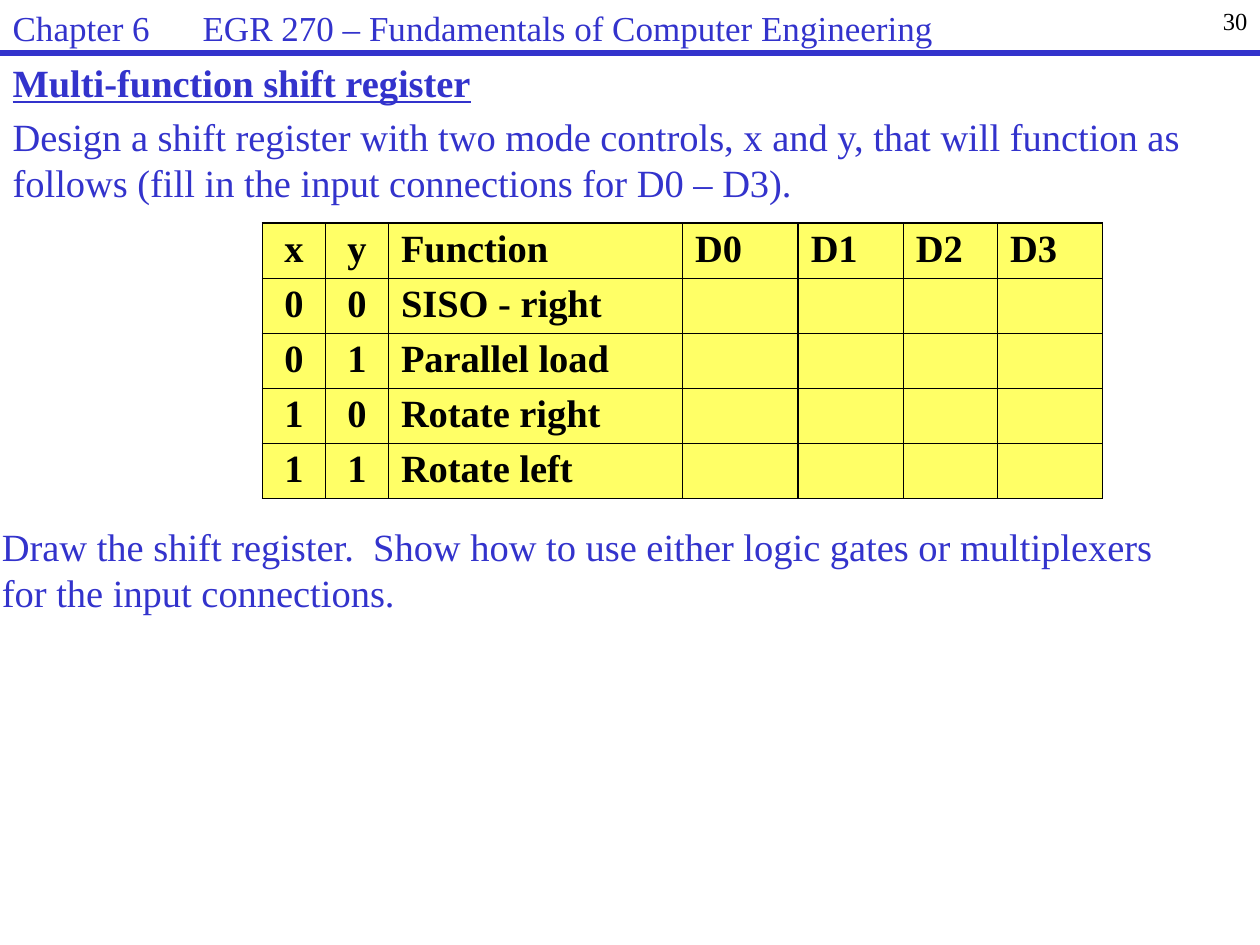
from lxml.etree import SubElement
from pptx import Presentation
from pptx.dml.color import RGBColor
from pptx.enum.text import MSO_ANCHOR, MSO_AUTO_SIZE, PP_ALIGN
from pptx.oxml.ns import qn
from pptx.util import Cm, Pt

COLORS = {"blue": "3333CC", "black": "000000", "yellow": "FFFF66"}
FONT = "Times New Roman"


def style(paragraph, size, color, bold=False, align=PP_ALIGN.LEFT):
    paragraph.alignment = align
    paragraph.font.name = FONT
    paragraph.font.size = Pt(size)
    paragraph.font.bold = bold
    paragraph.font.color.rgb = RGBColor.from_string(COLORS[color])


def fill_box(box, place, texts, size, color, align=PP_ALIGN.LEFT):
    box.left, box.top, box.width, box.height = [Cm(value) for value in place]
    frame = box.text_frame
    frame.word_wrap = True
    frame.auto_size = MSO_AUTO_SIZE.NONE
    frame.vertical_anchor = MSO_ANCHOR.TOP
    frame.text = "\n".join(texts)
    for paragraph in frame.paragraphs:
        style(paragraph, size, color, align=align)
        paragraph.space_before = Pt(size * 0.2)
    return frame.paragraphs


deck = Presentation()
deck.slide_width, deck.slide_height = Cm(25.4), Cm(19.05)
page = deck.slides.add_slide(deck.slide_layouts[1])
title, body = page.placeholders

header = fill_box(title, (0, 0, 23.5, 1.07),
                  ["Chapter 6\tEGR 270 – Fundamentals of Computer Engineering"], 20, "blue")[0]
tabs = SubElement(header._p.get_or_add_pPr(), qn("a:tabLst"))
SubElement(tabs, qn("a:tab"), pos=str(Cm(3.83)), algn="l")
header._p.pPr.remove(tabs)
header._p.pPr.find(qn("a:defRPr")).addprevious(tabs)

task = fill_box(body, (0, 1.07, 24.33, 3.43), [
    "Multi-function shift register",
    "Design a shift register with two mode controls, x and y, that will function as "
    "follows (fill in the input connections for D0 – D3).",
], 22, "blue")
task[0].font.bold = True
task[0].font.underline = True
for paragraph in task:
    properties = paragraph._p.pPr
    properties.set("marL", "0")
    properties.set("indent", "0")
    properties.find(qn("a:defRPr")).addprevious(
        SubElement(properties, qn("a:buNone")))

question = page.shapes.add_textbox(0, 0, 0, 0)
fill_box(question, (-0.21, 10.41, 24.33, 2.06), [
    "Draw the shift register.  Show how to use either logic gates or multiplexers "
    "for the input connections."], 22, "blue")
number = page.shapes.add_textbox(0, 0, 0, 0)
fill_box(number, (23.7, 0, 1.7, 1.07), ["30"], 14, "black", PP_ALIGN.RIGHT)[0].space_before = Pt(0)

rule = page.shapes.add_connector(1, 0, Cm(1.07), deck.slide_width, Cm(1.07))
rule.line.color.rgb = RGBColor.from_string(COLORS["blue"])
rule.line.width = Pt(3)
SubElement(rule._element.spPr, qn("a:effectLst"))

rows = [
    ("x", "y", "Function", "D0", "D1", "D2", "D3"),
    ("0", "0", "SISO - right"),
    ("0", "1", "Parallel load"),
    ("1", "0", "Rotate right"),
    ("1", "1", "Rotate left"),
]
widths = [1.27, 1.27, 5.93, 2.33, 2.12, 1.9, 2.12]
row_height = 1.11
table = page.shapes.add_table(len(rows), len(widths), Cm(5.29), Cm(4.5),
                              Cm(sum(widths)), Cm(row_height * len(rows))).table
for column, width in zip(table.columns, widths):
    column.width = Cm(width)
for row, texts in zip(table.rows, rows):
    row.height = Cm(row_height)
    for index, cell in enumerate(row.cells):
        cell.margin_top = cell.margin_bottom = Cm(0.1)
        cell.text = texts[index] if index < len(texts) else ""
        style(cell.text_frame.paragraphs[0], 22, "black", True,
              PP_ALIGN.CENTER if index < 2 else PP_ALIGN.LEFT)
        properties = cell._tc.get_or_add_tcPr()
        for side in ("lnL", "lnR", "lnT", "lnB"):
            border = SubElement(properties, qn(f"a:{side}"), w=str(Pt(1)))
            solid = SubElement(border, qn("a:solidFill"))
            SubElement(solid, qn("a:srgbClr"), val=COLORS["black"])
        cell.fill.solid()
        cell.fill.fore_color.rgb = RGBColor.from_string(COLORS["yellow"])

deck.save("out.pptx")
